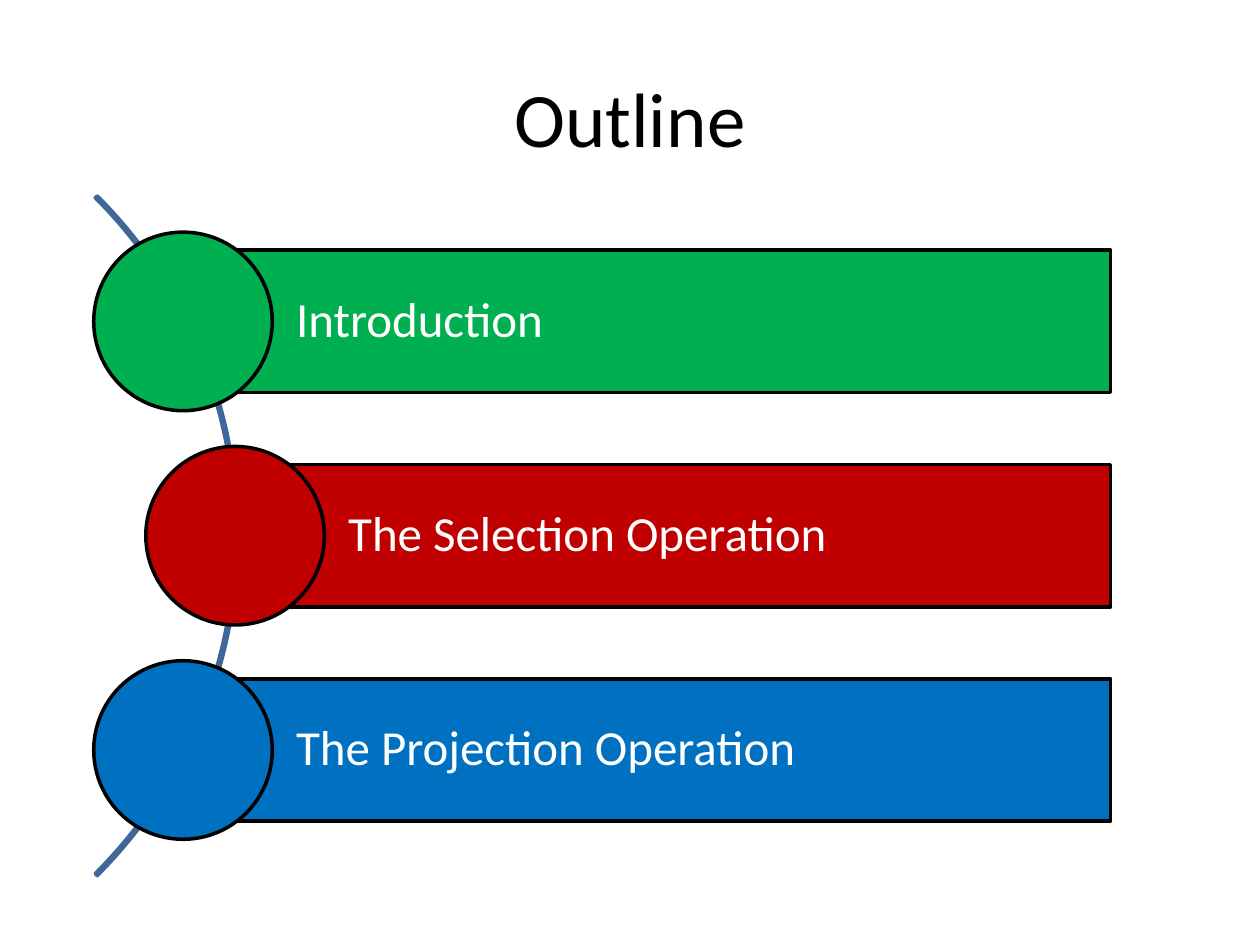
from dataclasses import dataclass

from pptx import Presentation
from pptx.dml.color import RGBColor
from pptx.enum import shapes, text
from pptx.util import Cm, Pt

BLACK = RGBColor(0x00, 0x00, 0x00)
WHITE = RGBColor(0xFF, 0xFF, 0xFF)
GREEN = RGBColor(0x00, 0xB0, 0x50)
RED = RGBColor(0xC0, 0x00, 0x00)
BLUE = RGBColor(0x00, 0x70, 0xC0)
STEEL = RGBColor(0x3F, 0x67, 0x97)
KIND = shapes.MSO_SHAPE

# Layout in centimetres
RIGHT = 22.39      # right edge of the bars
TOP, STEP = 6.48, 4.32  # centre of the first row, row pitch
BAR, DISC = 2.87, 3.6   # bar height, disc diameter
ARC = 19.38        # arc diameter


@dataclass
class Topic:
    label: str
    color: RGBColor
    mid: float  # horizontal centre of the disc, where the bar starts


TOPICS = [
    Topic("Introduction", GREEN, 3.69),
    Topic("The Selection Operation", RED, 4.74),
    Topic("The Projection Operation", BLUE, 3.69),
]


def apply(target, values: dict) -> None:
    for name, value in values.items():
        setattr(target, name, value)


def add_form(slide, kind, box: tuple, fill, line: RGBColor):
    form = slide.shapes.add_shape(kind, *map(Cm, box))
    form.shadow.inherit = False
    if fill is None:
        form.fill.background()
    else:
        form.fill.solid()
        form.fill.fore_color.rgb = fill
    form.line.color.rgb = line
    form.line.width = Pt(2)
    return form


def write(form, words: str, size: int, color: RGBColor, frame: dict, para: dict) -> None:
    body = form.text_frame
    apply(body, {"word_wrap": True, "vertical_anchor": text.MSO_ANCHOR.MIDDLE, **frame})
    line = body.paragraphs[0]
    line.text = words
    apply(line, para)
    apply(line.runs[0].font, {"name": "Calibri", "size": Pt(size)})
    line.runs[0].font.color.rgb = color


def add_topic(slide, topic: Topic, y: float) -> None:
    bar = add_form(slide, KIND.RECTANGLE,
                   (topic.mid, y - BAR / 2, RIGHT - topic.mid, BAR), topic.color, BLACK)
    pad = Cm(0.2)
    write(bar, topic.label, 28, WHITE,
          {"margin_left": Cm(2.28), "margin_right": pad,
           "margin_top": pad, "margin_bottom": pad},
          {"alignment": text.PP_ALIGN.LEFT, "line_spacing": 0.9})
    add_form(slide, KIND.OVAL,
             (topic.mid - DISC / 2, y - DISC / 2, DISC, DISC), topic.color, BLACK)


def main() -> None:
    deck = Presentation()
    apply(deck, {"slide_width": Cm(25.4), "slide_height": Cm(19.05)})
    slide = deck.slides.add_slide(deck.slide_layouts[6])

    # Title
    title = slide.shapes.add_textbox(Cm(1.27), Cm(0.76), Cm(22.86), Cm(3.18))
    write(title, "Outline", 44, BLACK, {}, {"alignment": text.PP_ALIGN.CENTER})

    # Thin arc behind the discs, centred on the middle row
    arc = add_form(slide, KIND.BLOCK_ARC,
                   (-14.58, TOP + STEP - ARC / 2, ARC, ARC), None, STEEL)
    for i, value in enumerate((189, 27, 0.003)):
        arc.adjustments[i] = value

    # Topics
    for i, topic in enumerate(TOPICS):
        add_topic(slide, topic, TOP + i * STEP)

    deck.save("out.pptx")


if __name__ == "__main__":
    main()
